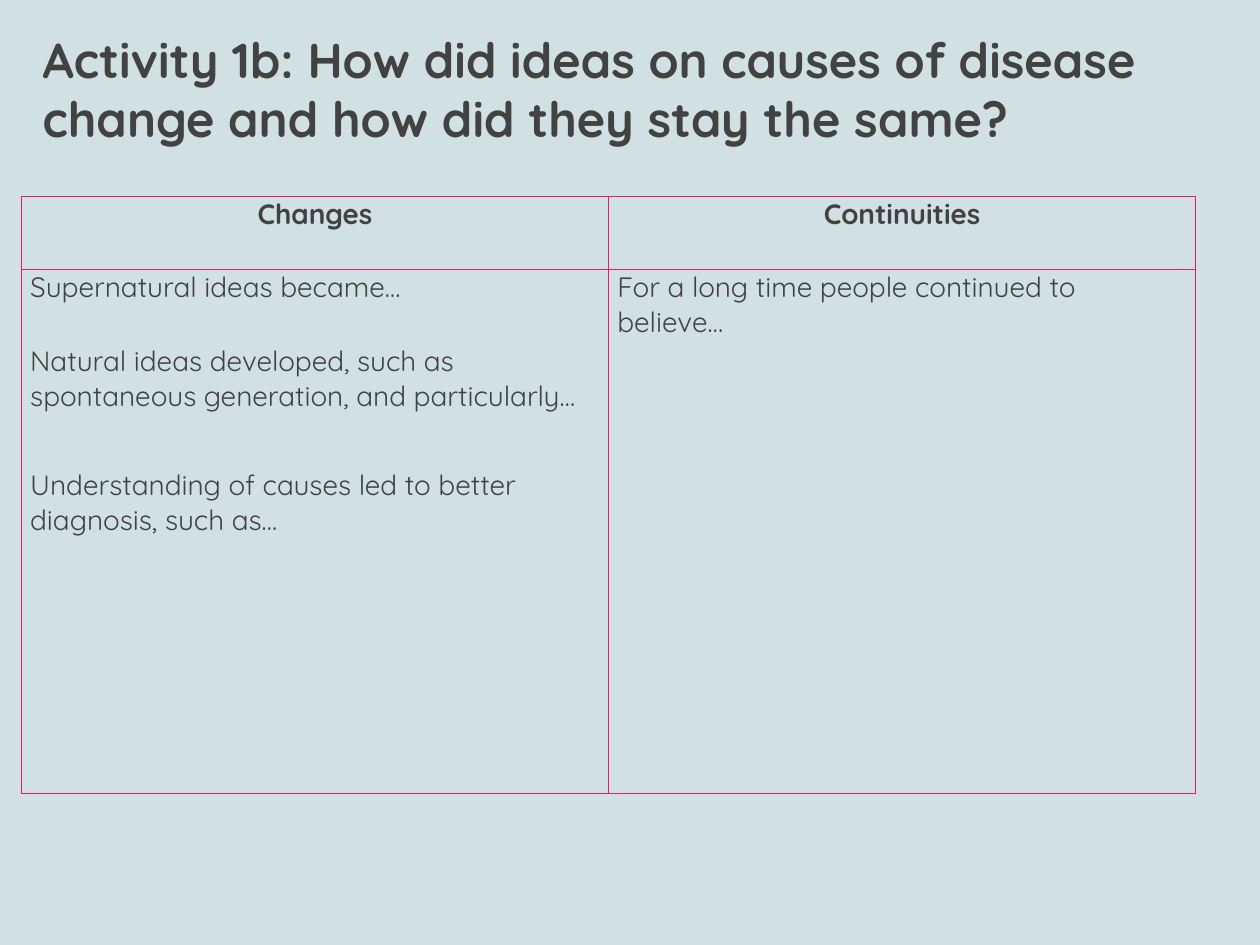
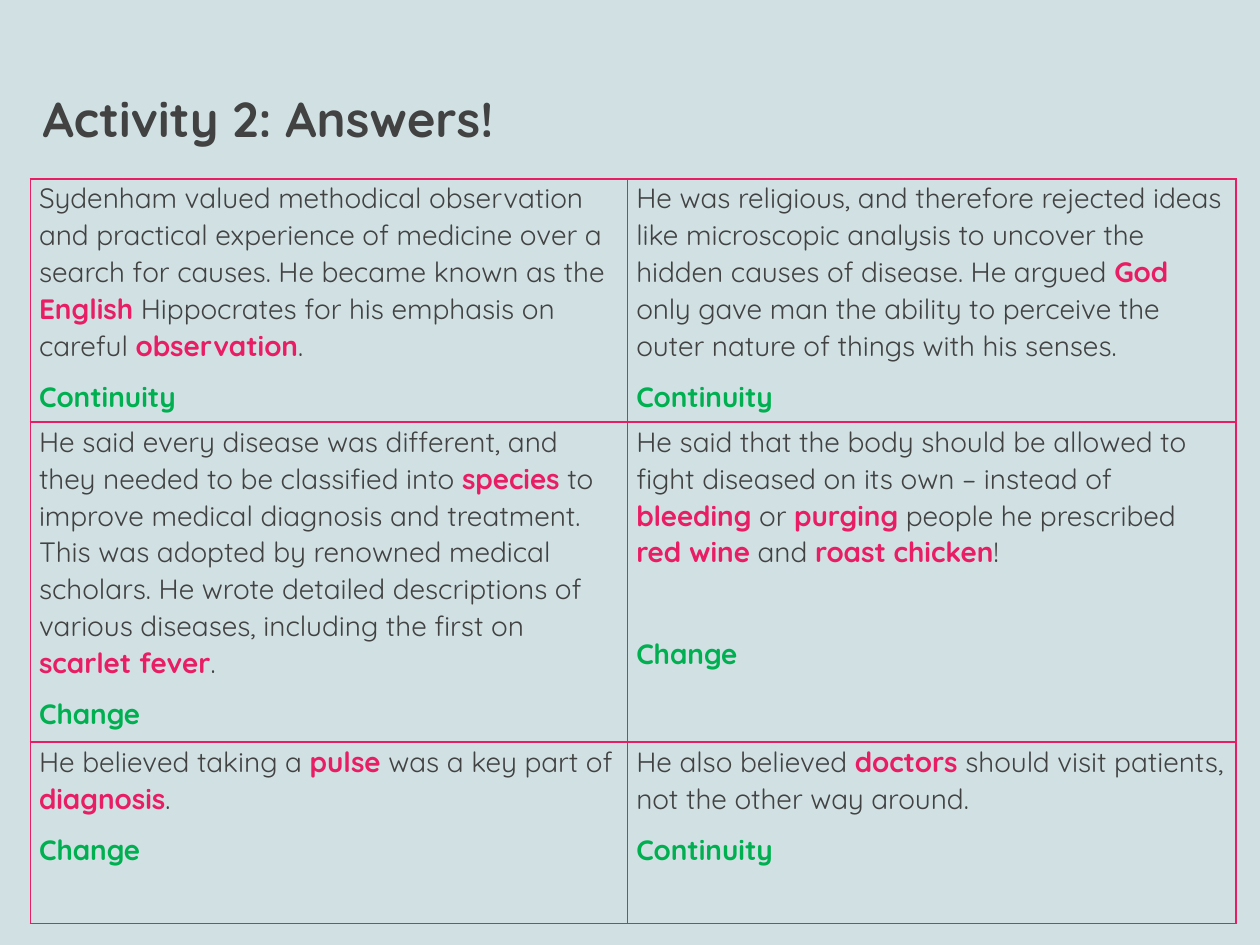
from lxml import etree
from pptx import Presentation
from pptx.dml.color import RGBColor
from pptx.enum.text import MSO_ANCHOR, PP_ALIGN
from pptx.oxml.ns import qn
from pptx.util import Inches, Pt

CENTER = PP_ALIGN.CENTER
BOTTOM = MSO_ANCHOR.BOTTOM
FONT = "Quicksand"
COLORS = {
    "background": "D0E0E3",
    "text": "424242",
    "accent": "E91D63",
    "answer": "00B050",
}
TITLE_BOX = (0.24, 0.17, 9.25, 1.1)
BORDER_WIDTH = Pt(1)
ANSWER_SPACING = 8

HEADINGS = ["Changes", "Continuities"]
PROMPTS = [
    [
        ("Supernatural ideas became…", 22.5),
        ("Natural ideas developed, such as spontaneous generation, and particularly…", 31),
        ("Understanding of causes led to better diagnosis, such as…", 0),
    ],
    [("For a long time people continued to believe…", 0)],
]

ANSWERS = [
    [
        ("Sydenham valued methodical observation and practical experience of medicine over "
         "a search for causes. He became known as the *English* Hippocrates for his emphasis "
         "on careful *observation*.", "Continuity", ANSWER_SPACING),
        ("He was religious, and therefore rejected ideas like microscopic analysis to uncover "
         "the hidden causes of disease. He argued *God* only gave man the ability to perceive "
         "the outer nature of things with his senses.", "Continuity", ANSWER_SPACING),
    ],
    [
        ("He said every disease was different, and they needed to be classified into *species* "
         "to improve medical diagnosis and treatment. This was adopted by renowned medical "
         "scholars. He wrote detailed descriptions of various diseases, including the first on "
         "*scarlet fever*.", "Change", ANSWER_SPACING),
        ("He said that the body should be allowed to fight diseased on its own – instead of "
         "*bleeding* or *purging* people he prescribed *red wine* and *roast chicken*!",
         "Change", 37),
    ],
    [
        ("He believed taking a *pulse* was a key part of *diagnosis*.", "Change", ANSWER_SPACING),
        ("He also believed *doctors* should visit patients, not the other way around.",
         "Continuity", ANSWER_SPACING),
    ],
]


def color(name):
    return RGBColor.from_string(COLORS[name])


def add_run(paragraph, text, size=16, color_name="text", bold=False):
    run = paragraph.add_run()
    run.text = text
    run.font.name = FONT
    run.font.size = Pt(size)
    run.font.bold = bold
    run.font.color.rgb = color(color_name)


def add_marked_runs(paragraph, text):
    for index, part in enumerate(text.split("*")):
        if index % 2:
            add_run(paragraph, part, color_name="accent", bold=True)
        else:
            add_run(paragraph, part)


def add_titled_slide(deck, title):
    slide = deck.slides.add_slide(deck.slide_layouts[6])
    slide.background.fill.solid()
    slide.background.fill.fore_color.rgb = color("background")
    frame = slide.shapes.add_textbox(*map(Inches, TITLE_BOX)).text_frame
    frame.word_wrap = True
    frame.vertical_anchor = BOTTOM
    frame.margin_left = frame.margin_right = Inches(0.1)
    frame.margin_top = frame.margin_bottom = Inches(0.1)
    add_run(frame.paragraphs[0], title, size=28, bold=True)
    return slide


def add_borders(cell):
    properties = cell._tc.get_or_add_tcPr()
    for side in ("lnL", "lnR", "lnT", "lnB"):
        line = etree.SubElement(properties, qn(f"a:{side}"), w=str(BORDER_WIDTH))
        fill = etree.SubElement(line, qn("a:solidFill"))
        etree.SubElement(fill, qn("a:srgbClr"), val=COLORS["accent"])


def add_grid(slide, left, top, widths, heights, fill_name=None):
    frame = slide.shapes.add_table(
        len(heights), len(widths), Inches(left), Inches(top),
        Inches(sum(widths)), Inches(sum(heights)))
    table = frame.table
    table.first_row = table.horz_banding = False
    for column, width in zip(table.columns, widths):
        column.width = Inches(width)
    for row, height in zip(table.rows, heights):
        row.height = Inches(height)
    for cell in table.iter_cells():
        cell.margin_left = cell.margin_right = Inches(0.07)
        cell.margin_top = cell.margin_bottom = 0
        add_borders(cell)
        if fill_name:
            cell.fill.solid()
            cell.fill.fore_color.rgb = color(fill_name)
        else:
            cell.fill.background()
    return table


def fill_prompts(cell, prompts):
    frame = cell.text_frame
    for index, (text, gap) in enumerate(prompts):
        paragraph = frame.add_paragraph() if index else frame.paragraphs[0]
        paragraph.space_after = Pt(gap)
        add_run(paragraph, text)


def fill_answer(cell, statement, verdict, gap):
    statement_line = cell.text_frame.paragraphs[0]
    verdict_line = cell.text_frame.add_paragraph()
    for paragraph, space in ((statement_line, gap), (verdict_line, ANSWER_SPACING)):
        paragraph.line_spacing = 1.06
        paragraph.space_after = Pt(space)
    add_marked_runs(statement_line, statement)
    add_run(verdict_line, verdict, color_name="answer", bold=True)


def build_prompt_slide(deck):
    slide = add_titled_slide(
        deck, "Activity 1b: How did ideas on causes of disease change and how did they stay the same?")
    table = add_grid(slide, 0.17, 1.56, [4.66, 4.66], [0.58, 4.16])
    for column, (heading, prompts) in enumerate(zip(HEADINGS, PROMPTS)):
        heading_line = table.cell(0, column).text_frame.paragraphs[0]
        heading_line.alignment = CENTER
        add_run(heading_line, heading, bold=True)
        fill_prompts(table.cell(1, column), prompts)


def build_answer_slide(deck):
    slide = add_titled_slide(deck, "Activity 2: Answers!")
    table = add_grid(slide, 0.24, 1.42, [4.74, 4.83], [1.93, 2.54, 1.44], "background")
    for row, answers in enumerate(ANSWERS):
        for column, answer in enumerate(answers):
            fill_answer(table.cell(row, column), *answer)


def main():
    deck = Presentation()
    deck.slide_width = Inches(10)
    deck.slide_height = Inches(7.5)
    build_prompt_slide(deck)
    build_answer_slide(deck)
    deck.save("out.pptx")


if __name__ == "__main__":
    main()
